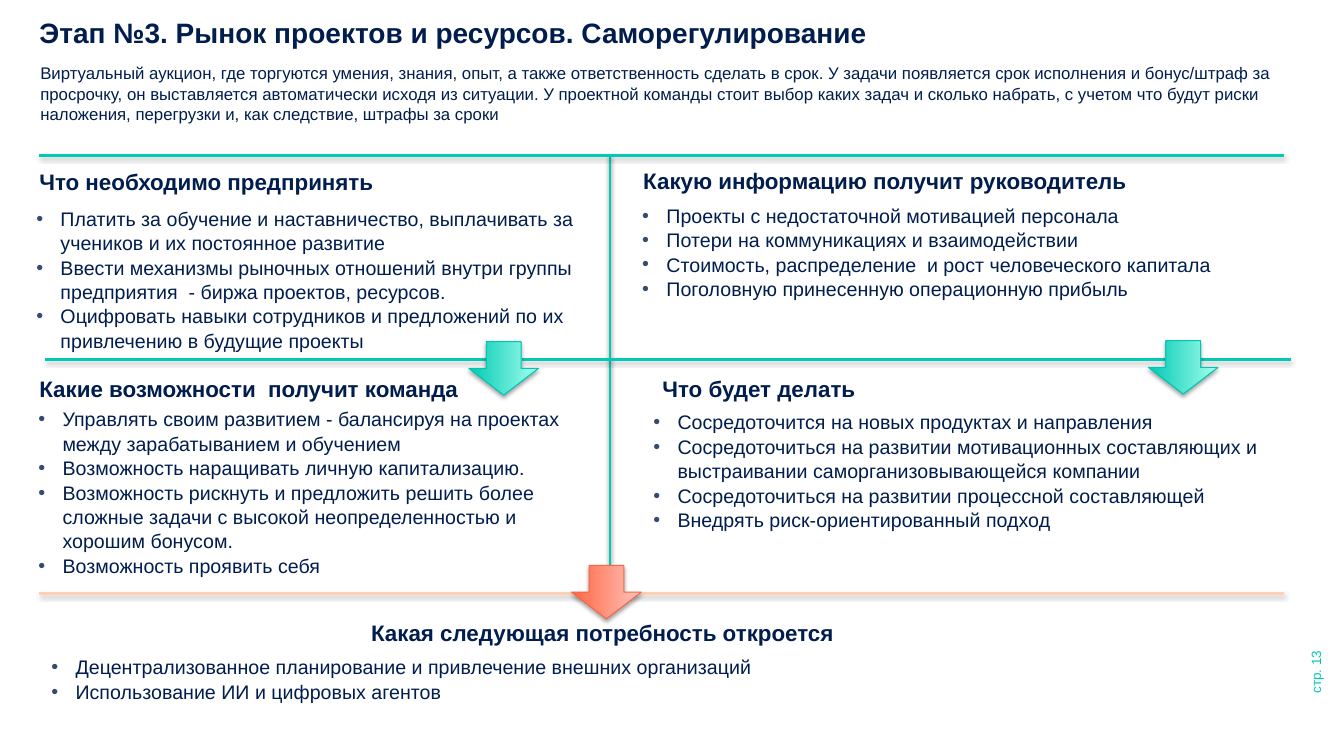
from dataclasses import dataclass

from lxml import etree
from pptx import Presentation
from pptx import util as u
from pptx.dml.color import RGBColor
from pptx.enum import shapes, text
from pptx.oxml import ns

NAVY = RGBColor(0x00, 0x1D, 0x4D)
BULLET = RGBColor(0x33, 0x4A, 0x71)
TEAL = RGBColor(0x00, 0xC9, 0xB4)
MINT = RGBColor(0xA4, 0xFF, 0xEC)
TEAL_EDGE = RGBColor(0x00, 0xC5, 0xB0)
PAGE_TEAL = RGBColor(0x00, 0xC8, 0xB3)
PEACH = RGBColor(0xFF, 0xCF, 0xB3)
CORAL = RGBColor(0xFF, 0x66, 0x41)
PINK = RGBColor(0xFF, 0xC3, 0xBC)
CORAL_EDGE = RGBColor(0xF1, 0x69, 0x48)
FONT = "Arial"
TOP, BOTTOM = text.MSO_ANCHOR.TOP, text.MSO_ANCHOR.BOTTOM


@dataclass
class Box:
    left: float
    top: float
    width: float
    height: float


@dataclass
class Section:
    heading: str
    heading_box: Box
    items: list[str]
    list_box: Box


@dataclass
class Rule:
    start: tuple[float, float]
    end: tuple[float, float]
    color: RGBColor


@dataclass
class Arrow:
    left: float
    top: float
    dark: RGBColor
    light: RGBColor
    edge: RGBColor


TITLE = "Этап №3. Рынок проектов и ресурсов. Саморегулирование"
INTRO = (
    "Виртуальный аукцион, где торгуются умения, знания, опыт, а также ответственность "
    "сделать в срок. У задачи появляется срок исполнения и бонус/штраф за просрочку, он "
    "выставляется автоматически исходя из ситуации. У проектной команды стоит выбор каких "
    "задач и сколько набрать, с учетом что будут риски наложения, перегрузки и, как "
    "следствие, штрафы за сроки"
)
SECTIONS = [
    Section("Что необходимо предпринять", Box(0.39, 1.68, 3.72, 0.25), [
        "Платить за обучение и наставничество, выплачивать за учеников и их постоянное развитие",
        "Ввести механизмы рыночных отношений внутри группы предприятия  - биржа проектов, ресурсов.",
        "Оцифровать навыки сотрудников и предложений по их привлечению в будущие проекты",
    ], Box(0.25, 2.04, 5.63, 1.55)),
    Section("Какую информацию получит руководитель", Box(6.38, 1.67, 5.46, 0.25), [
        "Проекты с недостаточной мотивацией персонала",
        "Потери на коммуникациях и взаимодействии",
        "Стоимость, распределение  и рост человеческого капитала",
        "Поголовную принесенную операционную прибыль",
    ], Box(6.26, 2.01, 6.47, 1.55)),
    Section("Какие возможности  получит команда", Box(0.39, 3.74, 5.35, 0.25), [
        "Управлять своим развитием - балансируя на проектах между зарабатыванием и обучением",
        "Возможность наращивать личную капитализацию.",
        "Возможность рискнуть и предложить решить более сложные задачи с высокой "
        "неопределенностью и хорошим бонусом.",
        "Возможность проявить себя",
    ], Box(0.27, 4.03, 5.63, 1.84)),
    Section("Что будет делать", Box(6.57, 3.74, 3.72, 0.25), [
        "Сосредоточится на новых продуктах и направления",
        "Сосредоточиться на развитии мотивационных составляющих и выстраивании "
        "саморганизовывающейся компании",
        "Сосредоточиться на развитии процессной составляющей",
        "Внедрять риск-ориентированный подход",
    ], Box(6.37, 4.06, 6.45, 1.55)),
    Section("Какая следующая потребность откроется", Box(3.68, 6.16, 4.75, 0.25), [
        "Децентрализованное планирование и привлечение внешних организаций",
        "Использование ИИ и цифровых агентов",
    ], Box(0.4, 6.49, 12.34, 0.99)),
]
RULES = [
    Rule((6.05, 1.54), (6.05, 6.04), TEAL),
    Rule((0.45, 3.57), (12.8, 3.57), TEAL),
    Rule((0.39, 5.89), (12.74, 5.89), PEACH),
    Rule((0.39, 1.54), (12.74, 1.54), TEAL),
]
ARROWS = [
    Arrow(4.73, 3.31, TEAL, MINT, TEAL_EDGE),
    Arrow(11.47, 3.3, TEAL, MINT, TEAL_EDGE),
    Arrow(5.75, 5.53, CORAL, PINK, CORAL_EDGE),
]


def add_box(slide, box: Box):
    return slide.shapes.add_textbox(*(u.Inches(v) for v in (box.left, box.top, box.width, box.height)))


def place(shape, box: Box) -> None:
    shape.left, shape.top = u.Inches(box.left), u.Inches(box.top)
    shape.width, shape.height = u.Inches(box.width), u.Inches(box.height)


def add_bullet(paragraph) -> None:
    properties = paragraph._p.get_or_add_pPr()
    properties.set("marL", str(u.Inches(0.35)))
    properties.set("indent", str(u.Inches(-0.24)))
    color = etree.SubElement(properties, ns.qn("a:buClr"))
    etree.SubElement(color, ns.qn("a:srgbClr"), val=str(BULLET))
    etree.SubElement(properties, ns.qn("a:buFont"), typeface=FONT)
    etree.SubElement(properties, ns.qn("a:buChar"), char="•")


def write(shape, lines: list[str], size: float, bold: bool = False, anchor=TOP,
          color: RGBColor = NAVY, spacing: float = 1.0, bulleted: bool = False) -> None:
    frame = shape.text_frame
    frame.text = "\n".join(lines)
    frame.word_wrap = True
    frame.auto_size = text.MSO_AUTO_SIZE.NONE
    frame.vertical_anchor = anchor
    frame.margin_left = frame.margin_right = frame.margin_top = frame.margin_bottom = 0
    for paragraph in frame.paragraphs:
        if bulleted:
            add_bullet(paragraph)
        paragraph.alignment = text.PP_ALIGN.LEFT
        paragraph.line_spacing = spacing
        paragraph.space_before = paragraph.space_after = u.Pt(0)
        for run in paragraph.runs:
            run.font.name, run.font.size, run.font.bold = FONT, u.Pt(size), bold
            run.font.color.rgb = color


def add_shadow(shape, opacity: int, distance: float) -> None:
    effects = etree.SubElement(shape._element.spPr, ns.qn("a:effectLst"))
    shadow = etree.SubElement(effects, ns.qn("a:outerShdw"), blurRad=str(u.Pt(3.1)),
                              dist=str(u.Pt(distance)), dir="5400000", rotWithShape="0")
    color = etree.SubElement(shadow, ns.qn("a:srgbClr"), val="000000")
    etree.SubElement(color, ns.qn("a:alpha"), val=str(opacity * 1000))


def add_rule(slide, rule: Rule) -> None:
    ends = (u.Inches(v) for v in rule.start + rule.end)
    connector = slide.shapes.add_connector(shapes.MSO_CONNECTOR.STRAIGHT, *ends)
    connector.line.color.rgb = rule.color
    connector.line.width = u.Pt(2)
    add_shadow(connector, 38, 1.6)


def add_arrow(slide, arrow: Arrow) -> None:
    shape = slide.shapes.add_shape(shapes.MSO_SHAPE.RIGHT_ARROW, u.Inches(arrow.left),
                                   u.Inches(arrow.top), u.Inches(0.53), u.Inches(0.69))
    shape.rotation = 90
    shape.fill.gradient()
    shape.fill.gradient_angle = 90
    for stop, color in zip(shape.fill.gradient_stops, (arrow.dark, arrow.light)):
        stop.color.rgb = color
    shape.line.color.rgb = arrow.edge
    shape.line.width = u.Pt(0.75)
    add_shadow(shape, 35, 1.8)


def main() -> None:
    presentation = Presentation()
    presentation.slide_width, presentation.slide_height = u.Inches(13.33), u.Inches(7.5)
    slide = presentation.slides.add_slide(presentation.slide_layouts.get_by_name("Comparison"))

    title, *bodies = slide.placeholders
    place(title, Box(0.39, 0.15, 9.49, 0.38))
    write(title, [TITLE], 20, bold=True)
    write(add_box(slide, Box(0.4, 0.61, 12.34, 0.91)), [INTRO], 12, spacing=1.04)

    for index, section in enumerate(SECTIONS):
        write(add_box(slide, section.heading_box), [section.heading], 16, bold=True, anchor=BOTTOM)
        body = bodies[index] if index < len(bodies) else add_box(slide, section.list_box)
        place(body, section.list_box)
        write(body, section.items, 14, spacing=1.04, bulleted=True)

    page_number = add_box(slide, Box(12.35, 6.1, 1.16, 0.4))
    page_number.rotation = 270
    write(page_number, ["стр. 13"], 9.6, anchor=BOTTOM, color=PAGE_TEAL)

    for rule in RULES:
        add_rule(slide, rule)
    for arrow in ARROWS:
        add_arrow(slide, arrow)
    presentation.save("out.pptx")


if __name__ == "__main__":
    main()
